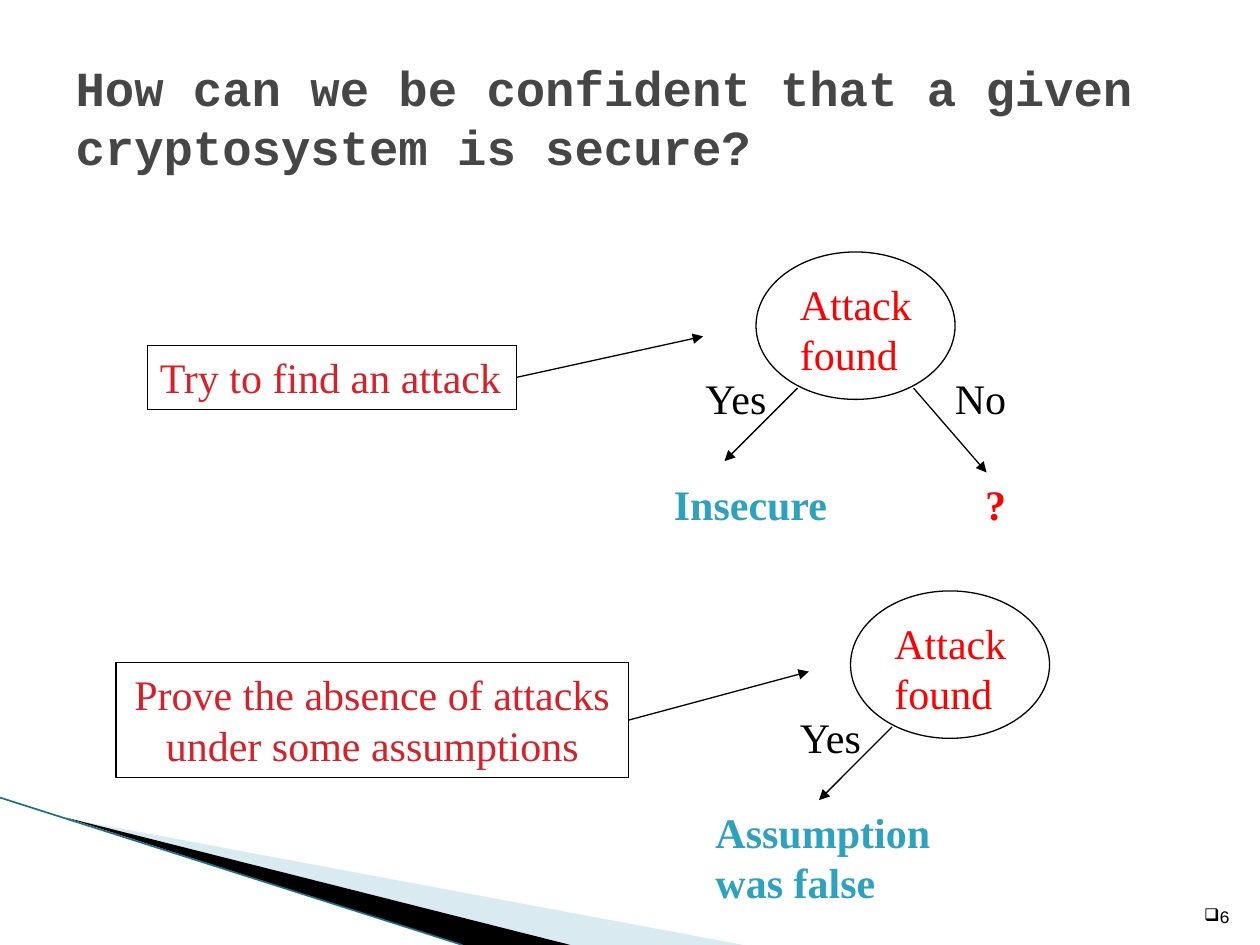
from lxml import etree
from pptx import Presentation
from pptx.dml.color import RGBColor
from pptx.enum.shapes import MSO_CONNECTOR, MSO_SHAPE
from pptx.enum.text import MSO_ANCHOR, MSO_AUTO_SIZE, PP_ALIGN
from pptx.oxml.ns import qn
from pptx.util import Inches, Pt

STRAIGHT = MSO_CONNECTOR.STRAIGHT
RECT, OVAL = MSO_SHAPE.RECTANGLE, MSO_SHAPE.OVAL
LEFT, CENTER, RIGHT = PP_ALIGN.LEFT, PP_ALIGN.CENTER, PP_ALIGN.RIGHT
TOP, MIDDLE, BOTTOM = MSO_ANCHOR.TOP, MSO_ANCHOR.MIDDLE, MSO_ANCHOR.BOTTOM
NO_FIT = MSO_AUTO_SIZE.NONE
RIGHT_SIDE = 3

COLORS = {
    "title": "464646",
    "black": "000000",
    "approach": "DA1F28",
    "attack": "FF0000",
    "outcome": "2DA2BF",
    "pale": "A0CBDC",
    "edge": "1B7186",
}
BODY = {"name": "Times New Roman", "size": Pt(24), "bold": False}
STRONG = {**BODY, "bold": True}
TITLE = {"name": "Courier New", "size": Pt(28), "bold": True}
NUMBER = {"name": "Courier New", "size": Pt(10)}


def rgb(color):
    return RGBColor.from_string(COLORS[color])


def add_run(p, text, color, style):
    r = p.add_run()
    r.text = text
    for name, value in style.items():
        setattr(r.font, name, value)
    r.font.color.rgb = rgb(color)


def set_frame(sp, anchor=TOP, wrap=True):
    tf = sp.text_frame
    settings = {"word_wrap": wrap, "auto_size": NO_FIT, "vertical_anchor": anchor}
    for name, value in settings.items():
        setattr(tf, name, value)
    return tf


def add_label(shapes, box, runs, style=BODY, align=LEFT, anchor=TOP, tab=None):
    sp = shapes.add_textbox(*map(Inches, box))
    p = set_frame(sp, anchor).paragraphs[0]
    p.alignment = align
    if tab:
        tabs = etree.SubElement(p._p.get_or_add_pPr(), qn("a:tabLst"))
        etree.SubElement(tabs, qn("a:tab"), pos=str(Inches(tab)), algn="l")
    for text, color in runs:
        add_run(p, text, color, style)
    return p


def add_outline(shapes, kind, box):
    sp = shapes.add_shape(kind, *map(Inches, box))
    sp.shadow.inherit = False
    sp.fill.background()
    sp.line.color.rgb = rgb("black")
    sp.line.width = Pt(0.75)
    return sp


def add_approach(shapes, box, lines, align):
    sp = add_outline(shapes, RECT, box)
    tf = set_frame(sp, wrap=False)
    for i, text in enumerate(lines):
        p = tf.add_paragraph() if i else tf.paragraphs[0]
        p.alignment = align
        add_run(p, text, "approach", BODY)
    return sp


def add_line(shapes, start, end, color="black", width=0.75):
    line = shapes.add_connector(STRAIGHT, *map(Inches, start + end))
    line.line.color.rgb = rgb(color)
    line.line.width = Pt(width)
    etree.SubElement(line._element.spPr, qn("a:effectLst"))
    return line


def add_arrow(shapes, start, end):
    line = add_line(shapes, start, end)
    etree.SubElement(line.line._get_or_add_ln(), qn("a:tailEnd"), type="triangle")
    return line


def add_wedge(shapes, points, color, alpha=None):
    pts = [tuple(map(Inches, point)) for point in points]
    builder = shapes.build_freeform(*pts[0])
    builder.add_line_segments(pts[1:])
    sp = builder.convert_to_shape()
    sp.shadow.inherit = False
    sp.line.fill.background()
    sp.fill.solid()
    sp.fill.fore_color.rgb = rgb(color)
    if alpha:
        clr = sp._element.spPr.find(".//" + qn("a:srgbClr"))
        etree.SubElement(clr, qn("a:alpha"), val=str(alpha * 1000))


def add_attack_test(shapes, x, y):
    add_label(shapes, (x + 0.25, y + 0.16, 1.25, 0.9), [("Attack found", "attack")])
    add_outline(shapes, OVAL, (x, y, 1.58, 1.17))
    add_arrow(shapes, (x + 0.33, y + 1.08), (x - 0.25, y + 1.66))


def add_number(shapes):
    p = add_label(shapes, (9.46, 7.01, 0.4, 0.4), [("6", "black")], NUMBER, RIGHT, BOTTOM)
    pPr = p._p.get_or_add_pPr()
    etree.SubElement(pPr, qn("a:buFont"), typeface="Wingdings")
    etree.SubElement(pPr, qn("a:buChar"), char="q")


def set_title(sp, text):
    sp.left, sp.top, sp.width, sp.height = map(Inches, (0.5, 0.3, 9, 1.25))
    p = set_frame(sp, MIDDLE).paragraphs[0]
    p.alignment = LEFT
    add_run(p, text, "title", TITLE)


def main():
    prs = Presentation()
    prs.slide_width, prs.slide_height = Inches(10), Inches(7.5)
    s = prs.slides.add_slide(prs.slide_layouts[5])
    shapes = s.shapes

    add_wedge(shapes, [(0.55, 6.5), (5.9, 7.5), (4.54, 7.5)], "pale", 40)
    add_wedge(shapes, [(0.53, 6.49), (4.53, 7.5), (3.67, 7.5)], "black")
    add_line(shapes, (0, 6.33), (3.67, 7.5), "edge", 0.95)
    add_number(shapes)
    set_title(shapes.title, "How can we be confident that a given cryptosystem is secure?")

    find = add_approach(shapes, (1.17, 2.74, 2.93, 0.51), ["Try to find an attack"], LEFT)
    prove = add_approach(
        shapes, (0.92, 5.26, 4.07, 0.91),
        ["Prove the absence of attacks", "under some assumptions"], CENTER)

    search = shapes.add_group_shape().shapes
    add_attack_test(search, 6, 2)
    add_arrow(search, (7.25, 3.08), (7.83, 3.75))
    add_label(search, (5.25, 3.75, 3.33, 0.5),
              [("Insecure\t", "outcome"), ("?", "attack")], STRONG, tab=2.47)
    add_label(search, (5.5, 2.91, 2.67, 0.5), [("Yes\tNo", "black")], tab=1.98)

    proof = shapes.add_group_shape().shapes
    add_attack_test(proof, 6.75, 4.69)
    add_label(proof, (5.58, 6.35, 2.25, 0.9), [("Assumption was false", "outcome")], STRONG)
    add_label(proof, (6.25, 5.6, 2.67, 0.5), [("Yes", "black")])

    for box, start, end in ((find, (4.1, 3), (5.58, 2.67)), (prove, (5, 5.67), (6.42, 5.33))):
        add_arrow(shapes, start, end).begin_connect(box, RIGHT_SIDE)

    prs.save("out.pptx")


if __name__ == "__main__":
    main()
